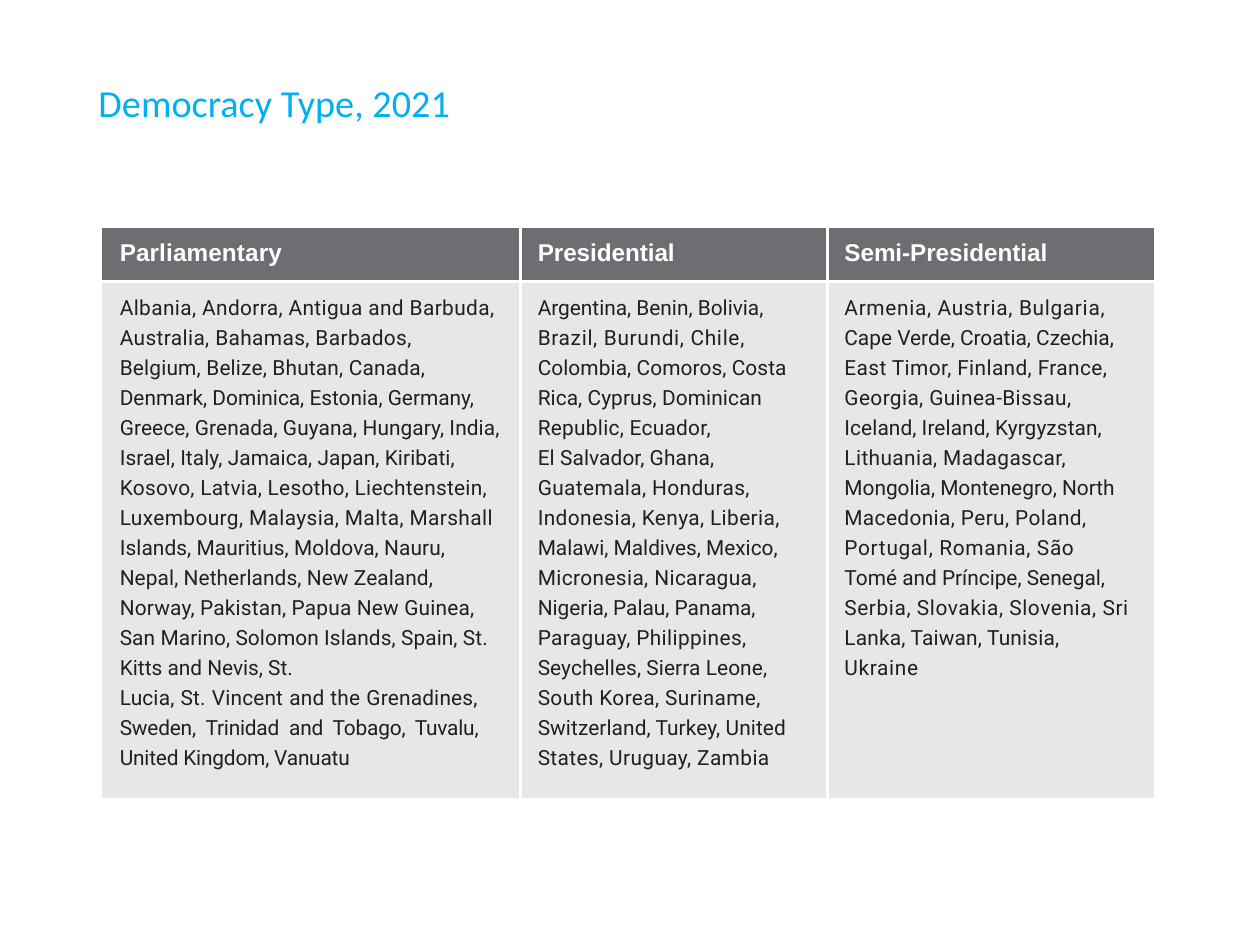
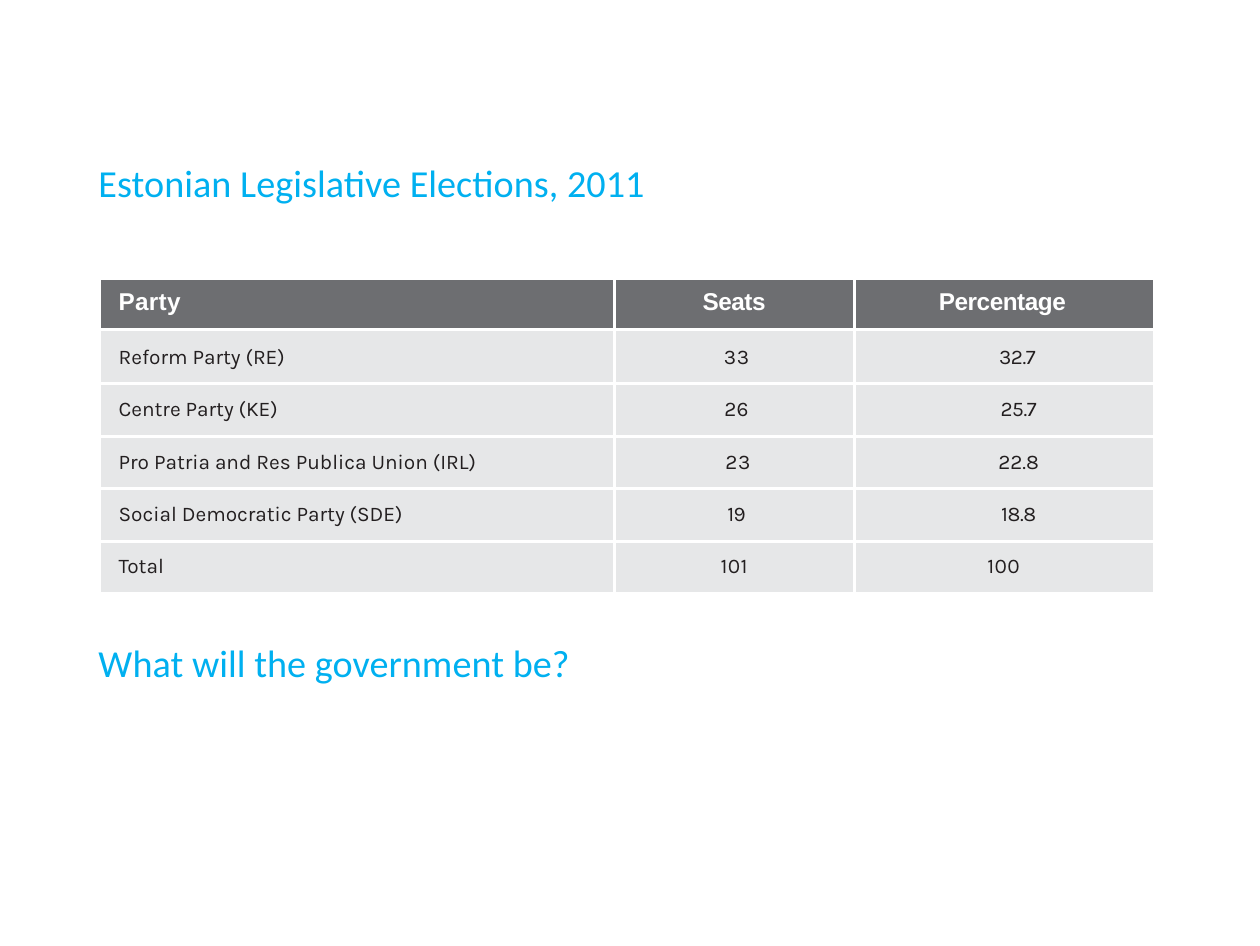
from copy import deepcopy
from lxml import etree
from pptx import Presentation
from pptx import util as u
from pptx.dml.color import RGBColor
from pptx.enum import text
from pptx.oxml.ns import qn

# Slide size in points; parts sit on a grid of 1/100 inch
WIDE, HIGH = 363, 272.5
UNIT = u.Inches(0.01)

BLUE, GRAY, PALE, INK, WHITE = "00B0F0", "6D6E71", "E6E7E8", "231F20", "FFFFFF"

# Text looks: font, size, colour, bold
TITLE = ("Calibri", 11, BLUE, False)
HEAD = ("Arial", 7, WHITE, True)
LIST = ("Roboto", 6, INK, False)
BODY = ("Karla", 6, INK, False)

LEFT, MID, JUST = (text.PP_ALIGN.LEFT, text.PP_ALIGN.CENTER,
                   text.PP_ALIGN.JUSTIFY)

# Lines of (letter spacing, words)
PARL = [
    (0.11, "Albania, Andorra, Antigua and Barbuda,"),
    (0.1, "Australia, Bahamas, Barbados,"),
    (0.07, "Belgium, Belize, Bhutan, Canada,"),
    (0, "Denmark, Dominica, Estonia, Germany,"),
    (0.03, "Greece, Grenada, Guyana, Hungary, India,"),
    (0.04, "Israel, Italy, Jamaica, Japan, Kiribati,"),
    (0.09, "Kosovo, Latvia, Lesotho, Liechtenstein,"),
    (0.11, "Luxembourg, Malaysia, Malta, Marshall"),
    (0.02, "Islands, Mauritius, Moldova, Nauru,"),
    (0.03, "Nepal, Netherlands, New Zealand,"),
    (0.05, "Norway, Pakistan, Papua New Guinea,"),
    (0.02, "San Marino, Solomon Islands, Spain, St."),
    (0, "Kitts and Nevis, St."),
]
ISLES = [
    (0.05, "Lucia, St. Vincent and the Grenadines, "),
    (-0.05, "Sweden, Trinidad and Tobago, Tuvalu, United Kingdom, Vanuatu"),
]
PRES = [
    (0, "Argentina, Benin, Bolivia,"),
    (0.2, "Brazil, Burundi, Chile,"),
    (0.02, "Colombia, Comoros, Costa"),
    (0.02, "Rica, Cyprus, Dominican"),
    (0.09, "Republic, Ecuador,"),
]
PRES_MORE = [
    (0.04, "El Salvador, Ghana,"),
    (0.11, "Guatemala, Honduras,"),
    (0.12, "Indonesia, Kenya, Liberia,"),
    (0.01, "Malawi, Maldives, Mexico,"),
    (0.11, "Micronesia, Nicaragua,"),
    (0, "Nigeria, Palau, Panama,"),
    (0.1, "Paraguay, Philippines,"),
    (0.02, "Seychelles, Sierra Leone,"),
    (0.11, "South Korea, Suriname,"),
    (0.04, "Switzerland, Turkey, United"),
    (0.1, "States, Uruguay, Zambia"),
]
SEMI = [
    (0.2, "Armenia, Austria, Bulgaria,"),
    (0, "Cape Verde, Croatia, Czechia,"),
    (0.12, "East Timor, Finland, France,"),
    (0.1, "Georgia, Guinea-Bissau,"),
    (0.03, "Iceland, Ireland, Kyrgyzstan,"),
    (0.1, "Lithuania, Madagascar,"),
    (0, "Mongolia, Montenegro, North"),
    (0.11, "Macedonia, Peru, Poland,"),
    (0.21, "Portugal, Romania, São"),
    (0, "Tomé and Príncipe, Senegal,"),
    (0.18, "Serbia, Slovakia, Slovenia, Sri"),
    (0.05, "Lanka, Taiwan, Tunisia,"),
    (0.2, "Ukraine"),
]
TYPES = [
    ("Parliamentary", 0.05, [PARL]),
    ("Presidential", 0, [PRES, PRES_MORE]),
    ("Semi-Presidential", 0, [SEMI]),
]
# Party, seats, percentage; the numbers carry letter spacing and left inset
VOTES = [
    ("Reform Party (RE)", ("33", 0.2, 2), ("32.7", -0.1, 11)),
    ("Centre Party (KE)", ("26", 0.1, 2), ("25.7", -0.1, 12)),
    ("Pro Patria and Res Publica Union (IRL)", ("23", 0.2, 3),
     ("22.8", 0, 12)),
    ("Social Democratic Party (SDE)", ("19", -0.1, 2), ("18.8", -0.1, 12)),
    ("Total", ("101", 0.1, 0), ("100", 0.1, 0)),
]


def grid(n):
    return int(n * UNIT)


def paint(color):
    return RGBColor.from_string(color)


def write(par, words, look, gap=0):
    """Add one run."""
    run = par.add_run()
    run.text = words
    font = run.font
    font.name, size, color, font.bold = look
    font.size = u.Pt(size)
    font.color.rgb = paint(color)
    if gap:
        run._r.get_or_add_rPr().set("spc", str(round(gap * 100)))
    return run


def lines(par, rows, look):
    """Add runs with a line break between them."""
    par.line_spacing = 1.24
    for i, (gap, words) in enumerate(rows):
        run = write(par, words, look, gap)
        if i < len(rows) - 1:
            par.add_line_break()
            par._p[-1].insert(0, deepcopy(run._r.rPr))


def title(slide, words, top, wide):
    box = slide.shapes.add_textbox(grid(38), grid(top), grid(wide), grid(20))
    frame = box.text_frame
    frame.word_wrap = False
    frame.margin_left, frame.margin_top = grid(1.4), grid(1)
    frame.margin_right = frame.margin_bottom = 0
    par = frame.paragraphs[0]
    par.space_before = u.Pt(0.9)
    write(par, words, TITLE)


def edges(cell, inner):
    """White rules on the inner sides, none on the outer ones."""
    prop = cell._tc.get_or_add_tcPr()
    for side, shown in zip("LRTB", inner):
        line = etree.SubElement(prop, qn("a:ln" + side), w=str(u.Pt(1)))
        if shown:
            fill = etree.SubElement(line, qn("a:solidFill"))
            etree.SubElement(fill, qn("a:srgbClr"), val=WHITE)
        else:
            etree.SubElement(line, qn("a:noFill"))


def table(slide, box, wides, highs):
    """Place an empty ruled table with a dark head row."""
    rows, cols = len(highs), len(wides)
    tab = slide.shapes.add_table(rows, cols, *map(grid, box)).table
    tab.first_row = tab.horz_banding = False
    for col, wide in zip(tab.columns, wides):
        col.width = grid(wide)
    for row, high in zip(tab.rows, highs):
        row.height = grid(high)
    for r in range(rows):
        for c in range(cols):
            cell = tab.cell(r, c)
            edges(cell, (c > 0, c < cols - 1, r > 0, r < rows - 1))
            cell.fill.solid()
            cell.fill.fore_color.rgb = paint(PALE if r else GRAY)
    return tab


def inset(cell, left, top, align=LEFT):
    """Set the cell's margins and return its first paragraph."""
    cell.margin_left, cell.margin_top = grid(left), grid(top)
    cell.margin_right = cell.margin_bottom = 0
    par = cell.text_frame.paragraphs[0]
    par.alignment = align
    return par


def types(slide):
    """Countries by type of democracy."""
    title(slide, "Democracy Type, 2021", 31, 149)
    tab = table(slide, (41, 91.25, 421, 228), (167.25, 122.75, 131),
                (21.25, 206.75))
    for c, (name, gap, parts) in enumerate(TYPES):
        write(inset(tab.cell(0, c), 7, 4.5), name, HEAD, gap)
        cell = tab.cell(1, c)
        par = inset(cell, 7, 3.75)
        for i, part in enumerate(parts):
            lines(cell.text_frame.add_paragraph() if i else par, part, LIST)

    # Justified tail of the first list
    par = tab.cell(1, 0).text_frame.add_paragraph()
    par.alignment, par.line_spacing = JUST, 1.24
    par._p.get_or_add_pPr().set("marR", str(grid(17)))
    for gap, words in ISLES:
        write(par, words, LIST, gap)


def votes(slide):
    """Election results and a question."""
    title(slide, "Estonian Legislative Elections, 2011", 63, 229)
    tab = table(slide, (40.5, 112, 421, 125), (205.25, 96, 119.75),
                (20, 21.5, 21, 21, 21, 20.5))
    heads = (("Party", 0.1, 7, LEFT), ("Seats", -0.1, 0, MID),
             ("Percentage", -0.1, 34, LEFT))
    for c, (name, gap, left, align) in enumerate(heads):
        write(inset(tab.cell(0, c), left, 3.25, align), name, HEAD, gap)
    for r, (party, *nums) in enumerate(VOTES, 1):
        top = 6.25 if r == 1 else 5.5
        write(inset(tab.cell(r, 0), 7, top), party, BODY)
        for c, (num, gap, left) in enumerate(nums, 1):
            write(inset(tab.cell(r, c), left, top, MID), num, BODY, gap)
    title(slide, "What will the government be?", 255, 195)


def main():
    deck = Presentation()
    deck.slide_width, deck.slide_height = u.Pt(WIDE), u.Pt(HIGH)
    for build in (types, votes):
        build(deck.slides.add_slide(deck.slide_layouts[6]))
    deck.save("out.pptx")


if __name__ == "__main__":
    main()
